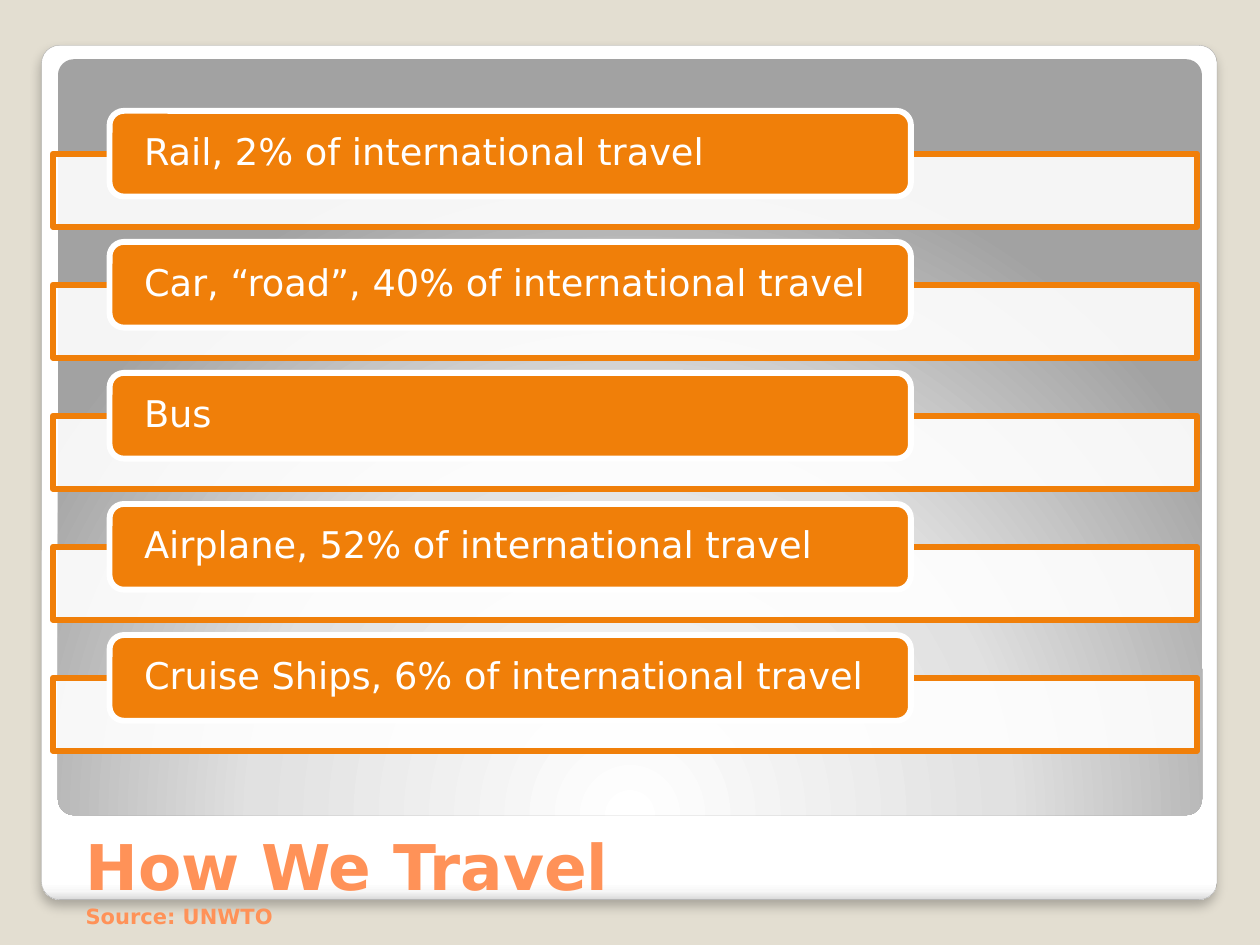
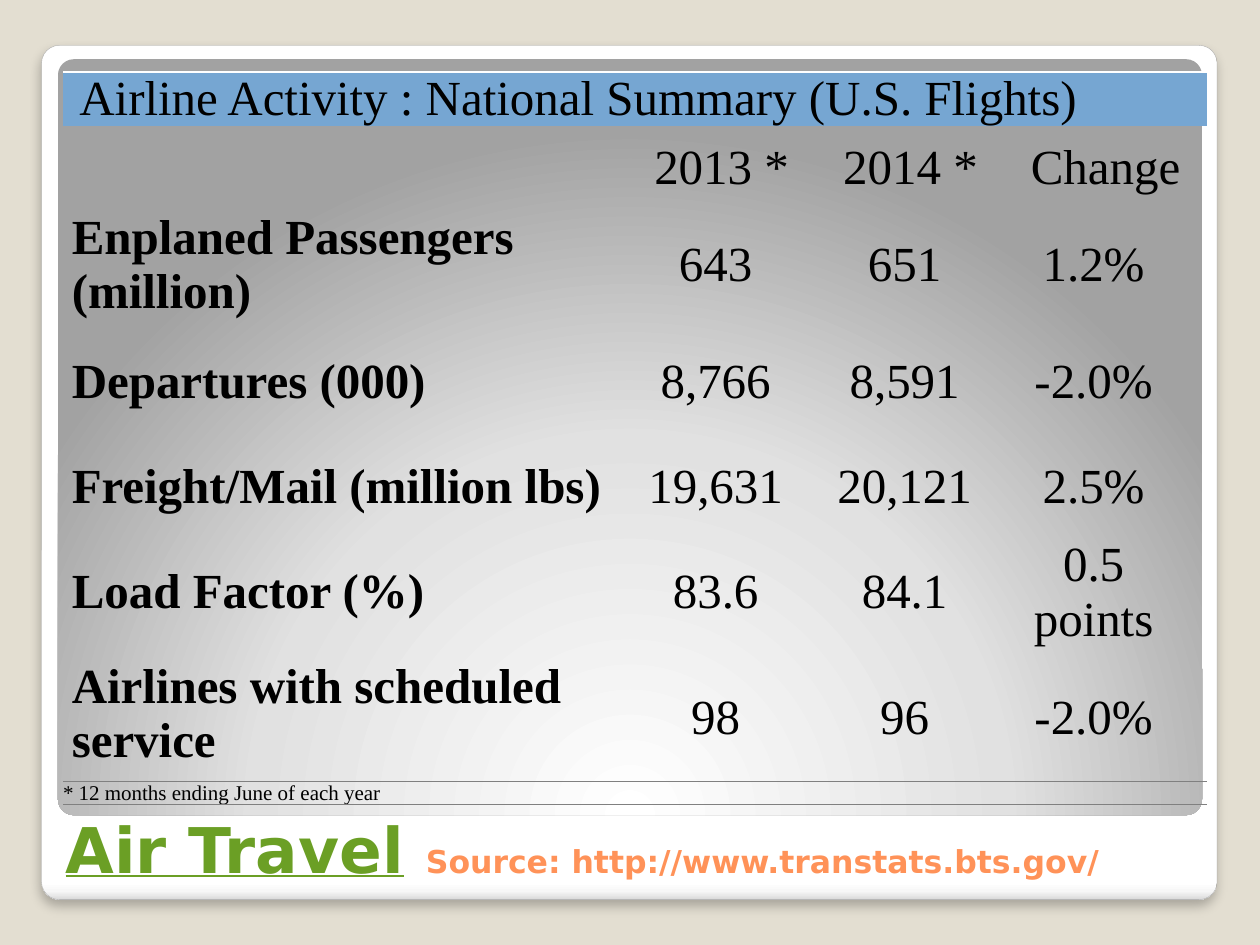
"""Two travel slides: modes of travel as bars, and a table of air activity."""
from lxml.etree import SubElement as Sub
from pptx import Presentation
from pptx.dml.color import RGBColor
from pptx.enum.shapes import MSO_SHAPE as Form
from pptx.enum.text import MSO_ANCHOR as Anchor, MSO_AUTO_SIZE as Fit, PP_ALIGN as Align
from pptx.oxml import parse_xml
from pptx.oxml.ns import nsdecls, qn
from pptx.util import Inches, Pt

MODES = [
    "Rail, 2% of international travel",
    "Car, “road”, 40% of international travel",
    "Bus",
    "Airplane, 52% of international travel",
    "Cruise Ships, 6% of international travel",
]
TOP = "Airline Activity : National Summary (U.S. Flights)"
HEADS = ["", "2013 * ", "2014 * ", "Change"]
STATS = [
    ("Enplaned Passengers (million)", "643", "651", "1.2%"),
    ("Departures (000)", "8,766", "8,591", "-2.0%"),
    ("Freight/Mail (million lbs)", "19,631", "20,121", "2.5%"),
    ("Load Factor (%)", "83.6", "84.1", "0.5 points"),
    ("Airlines with scheduled service", "98", "96", "-2.0%"),
]
NOTE = "* 12 months ending June of each year"
COLS = [4.54, 1.54, 1.46, 1.54]
ROWS = [0.33, 0.67, 0.67, 1, 0.67, 1, 1, 0.18]

HUES = {
    "back": "E3DED1", "white": "FFFFFF", "black": "000000", "edge": "A4A4A4",
    "title": "FF9258", "link": "6B9F25", "bar": "F07F09",
    "band": "76A6D2", "rule": "808080",
}
SANS, SERIF = "DejaVu Sans", "Times New Roman"
CARD = [(0, "FFFFFF"), (98, "FFFFFF"), (99, "F7F7F7"), (100, "DADADA")]
GLOW = [(0, "FFFFFF"), (55, "E1E1E1"), (100, "A2A2A2")]
DOWN = '<a:lin ang="5400000" scaled="0"/>'
ROUND = ('<a:path path="circle"><a:fillToRect l="50000" t="175000" '
         'r="50000" b="-75000"/></a:path>')
PLAIN = "{2D5ABB26-0587-4C30-8999-92F81FD0307C}"


def hue(name):
    return RGBColor.from_string(HUES[name])


def style(font, face, size, color, bold=False):
    font.name, font.size, font.bold = face, Pt(size), bold
    font.color.rgb = hue(color)


def add_box(slide, form, at, fill=None, line=None, width=0):
    box = slide.shapes.add_shape(form, *map(Inches, at))
    box.shadow.inherit = False
    box.fill.background()
    if fill:
        box.fill.solid()
        box.fill.fore_color.rgb = hue(fill)
    if line:
        box.line.color.rgb = hue(line)
        box.line.width = Pt(width)
    else:
        box.line.fill.background()
    return box


def shade(box, stops, path):
    marks = "".join(f'<a:gs pos="{pos * 1000}"><a:srgbClr val="{tint}"/></a:gs>'
                    for pos, tint in stops)
    grad = parse_xml(f'<a:gradFill {nsdecls("a")} rotWithShape="1">'
                     f'<a:gsLst>{marks}</a:gsLst>{path}</a:gradFill>')
    props = box.element.spPr
    props.replace(props.find(qn("a:noFill")), grad)


def build_frame(slide):
    """Move the card and its glowing panel to the layout, behind all else."""
    card = add_box(slide, Form.ROUNDED_RECTANGLE, (0.33, 0.36, 9.33, 6.78),
                   line="edge", width=0.16)
    panel = add_box(slide, Form.ROUNDED_RECTANGLE, (0.46, 0.47, 9.08, 6))
    shade(card, CARD, DOWN)
    shade(panel, GLOW, ROUND)
    effects = card.element.spPr.find(qn("a:effectLst"))
    effects.append(parse_xml(
        f'<a:outerShdw {nsdecls("a")} blurRad="{Pt(6)}" dist="{Pt(4)}" dir="5400000">'
        f'<a:srgbClr val="{HUES["black"]}"><a:alpha val="25000"/></a:srgbClr>'
        '</a:outerShdw>'))
    layout = slide.slide_layout
    layout.background.fill.solid()
    layout.background.fill.fore_color.rgb = hue("back")
    for spot, box in enumerate((card, panel), 2):
        box.adjustments[0] = 0.021
        layout.shapes.element.insert(spot, box.element)


def set_title(slide, at, parts):
    title = slide.shapes.title
    title.left, title.top, title.width, title.height = map(Inches, at)
    frame = title.text_frame
    frame.auto_size, frame.vertical_anchor = Fit.NONE, Anchor.BOTTOM
    para = frame.paragraphs[0]
    para.alignment = Align.LEFT
    for text, size, color in parts:
        if text == "\n":
            para.add_line_break()
            continue
        run = para.add_run()
        run.text = text
        style(run.font, SANS, size, color, True)
        run.font.underline = color == "link"


def add_mode(slide, text, drop):
    bar = add_box(slide, Form.RECTANGLE, (0.42, 1.22 + drop, 9.08, 0.58),
                  "white", "bar", 3.35)
    tint = next(bar.element.spPr.iter(qn("a:srgbClr")))
    Sub(tint, qn("a:alpha"), val="90000")
    chip = add_box(slide, Form.ROUNDED_RECTANGLE, (0.87, 0.88 + drop, 6.36, 0.68),
                   "bar", "white", 3.35)
    frame = chip.text_frame
    frame.word_wrap, frame.vertical_anchor = True, Anchor.MIDDLE
    frame.margin_left = frame.margin_right = Inches(0.24)
    frame.margin_top = frame.margin_bottom = 0
    para = frame.paragraphs[0]
    para.text, para.alignment, para.line_spacing = text, Align.LEFT, 0.9
    style(para.font, SANS, 21, "white")


def fill_cell(cell, text, left=0, right=0, low=0, size=28, bold=False, mid=False):
    cell.vertical_anchor = Anchor.MIDDLE
    cell.margin_left, cell.margin_right = Inches(left), Inches(right)
    cell.margin_top, cell.margin_bottom = 0, Inches(low)
    cell.fill.background()
    para = cell.text_frame.paragraphs[0]
    para.text = text
    para.alignment = Align.CENTER if mid else Align.LEFT
    style(para.font, SERIF, size, "black", bold)


def add_rule(table, row, side, color):
    for cell in table.rows[row].cells:
        props = cell._tc.get_or_add_tcPr()
        line = parse_xml(
            f'<a:{side} {nsdecls("a")} w="{Pt(1)}"><a:solidFill>'
            f'<a:srgbClr val="{HUES[color]}"/></a:solidFill></a:{side}>')
        props.insert(len(props.findall(qn("a:lnT"))), line)


def add_stats(slide):
    grid = slide.shapes.add_table(len(ROWS), len(COLS), Inches(0.5), Inches(0.57),
                                  Inches(sum(COLS)), Inches(sum(ROWS)))
    next(grid.element.iter(qn("a:tableStyleId"))).text = PLAIN
    table = grid.table
    table.first_row = table.horz_banding = False
    for col, width in zip(table.columns, COLS):
        col.width = Inches(width)
    for row, height in zip(table.rows, ROWS):
        row.height = Inches(height)
    last = len(ROWS) - 1
    for row, text, left, size in ((0, TOP, 0.13, 28), (last, NOTE, 0, 12)):
        for col, cell in enumerate(table.rows[row].cells):
            fill_cell(cell, "" if col else text, left, size=size)
        table.cell(row, 0).merge(table.cell(row, len(COLS) - 1))
    band = table.cell(0, 0).fill
    band.solid()
    band.fore_color.rgb = hue("band")
    for col, text in enumerate(HEADS):
        fill_cell(table.cell(1, col), text, right=0.07, mid=True)
    for row, (name, *values) in enumerate(STATS, 2):
        low = 0.07 if row == last - 1 else 0
        fill_cell(table.cell(row, 0), name, 0.07, low=low, bold=True)
        for col, text in enumerate(values, 1):
            fill_cell(table.cell(row, col), text, right=0.26, mid=True)
    add_rule(table, 0, "lnT", "white")
    add_rule(table, last - 1, "lnB", "rule")
    add_rule(table, last, "lnT", "rule")
    add_rule(table, last, "lnB", "rule")


def main():
    deck = Presentation()
    deck.slide_width, deck.slide_height = Inches(10), Inches(7.5)
    modes, air = (deck.slides.add_slide(deck.slide_layouts[5]) for _ in range(2))
    build_frame(modes)
    set_title(modes, (0.58, 6.27, 8.95, 1.15), [
        ("How We Travel", 36, "title"), ("\n", 36, "title"),
        ("Source: UNWTO", 12, "title")])
    for spot, text in enumerate(MODES):
        add_mode(modes, text, spot * 1.04)
    set_title(air, (0.42, 5.83, 9, 1.25), [
        ("Air Travel", 36, "link"), (" ", 36, "title"),
        ("Source: http://www.transtats.bts.gov/", 18, "title")])
    add_stats(air)
    deck.save("out.pptx")


if __name__ == "__main__":
    main()
